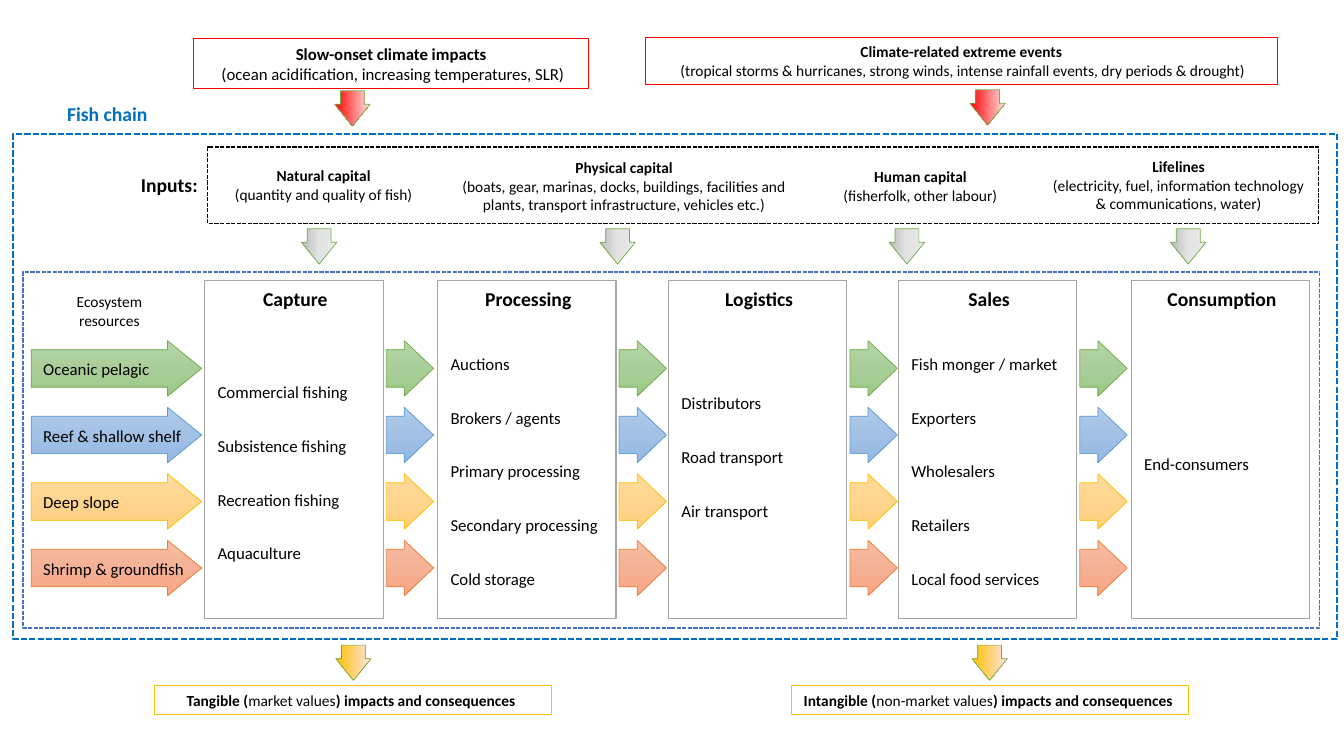
import copy
from dataclasses import dataclass
from typing import NamedTuple, Optional, Sequence

import pptx
import pptx.dml.color
import pptx.enum.dml
import pptx.enum.shapes
import pptx.enum.text
import pptx.oxml.ns
import pptx.util

Inches = pptx.util.Inches
Align = pptx.enum.text.PP_ALIGN
Preset = pptx.enum.shapes.MSO_SHAPE


@dataclass(frozen=True)
class Theme:
    font: str = "Calibri"
    heading: float = 14
    body: float = 12
    small: float = 11
    black: str = "000000"
    white: str = "FFFFFF"
    chain: str = "0070C0"
    stages: str = "4472C4"
    stage: str = "A5A5A5"
    impact: str = "FF0000"
    consequence: str = "FFC000"
    arrow_edge: str = "70AD47"
    impact_blend: tuple = ("FF0000", "FFE3E3")
    input_blend: tuple = ("EBEAEA", "E4E3E3", "BDBCBC")
    consequence_blend: tuple = ("FFC000", "FFE3E3")


class Area(NamedTuple):
    left: float
    top: float
    width: float
    height: float


class Span(NamedTuple):
    text: str
    bold: bool = False


class Resource(NamedTuple):
    name: str
    blend: tuple
    edge: str


class Stage(NamedTuple):
    name: str
    left: float
    items_top: float
    items: tuple


class Input(NamedTuple):
    name: str
    detail: str
    area: Area
    arrow_left: float


class Callout(NamedTuple):
    lines: tuple
    area: Area
    size: float
    edge: str
    edge_width: float
    fill: Optional[str]
    arrow_left: float
    arrow_top: float
    blend: tuple


THEME = Theme()
ARROW_ADJUSTMENTS = (0.674, 0.616)
SMALL_ARROW = 0.35
ROW_TOP, ROW_PITCH, ROW_HEIGHT = 3.38, 0.66, 0.55
STAGE_TOP, STAGE_WIDTH, STAGE_HEIGHT = 2.78, 1.77, 3.36

RESOURCES = (
    Resource("Oceanic pelagic", ("B5D5A7", "AACE9A", "9CC987"), "70AD47"),
    Resource("Reef & shallow shelf", ("B1CBE9", "A3C1E5", "93B9E4"), "5B9BD5"),
    Resource("Deep slope", ("FFDB9E", "FFD590", "FFD07C"), "FFC000"),
    Resource("Shrimp & groundfish", ("F7BDA5", "F5B196", "F8A582"), "ED7D31"),
)
STAGES = (
    Stage("Capture", 2.03, 3.74, ("Commercial fishing", "Subsistence fishing",
                                  "Recreation fishing", "Aquaculture")),
    Stage("Processing", 4.34, 3.46, ("Auctions", "Brokers / agents", "Primary processing",
                                     "Secondary processing", "Cold storage")),
    Stage("Logistics", 6.63, 3.85, ("Distributors", "Road transport", "Air transport")),
    Stage("Sales", 8.91, 3.46, ("Fish monger / market", "Exporters", "Wholesalers",
                                "Retailers", "Local food services")),
    Stage("Consumption", 11.22, 4.45, ("End-consumers",)),
)
INPUTS = (
    Input("Natural capital", "(quantity and quality of fish)", Area(2.22, 1.6, 1.98, 0.47), 2.99),
    Input("Physical capital", "(boats, gear, marinas, docks, buildings, facilities and plants, "
          "transport infrastructure, vehicles etc.)", Area(4.45, 1.52, 3.48, 0.66), 5.95),
    Input("Human capital", "(fisherfolk, other labour)", Area(8.16, 1.61, 1.94, 0.47), 8.82),
    Input("Lifelines", "(electricity, fuel, information technology & communications, water)",
          Area(10.33, 1.51, 2.72, 0.66), 11.61),
)
CALLOUTS = (
    Callout(((Span("Slow-onset climate impacts", True),),
             (Span(" (ocean acidification, increasing temperatures, SLR)"),)),
            Area(1.92, 0.38, 3.92, 0.5), THEME.body, THEME.impact, 0.75, None,
            3.32, 0.9, THEME.impact_blend),
    Callout(((Span("Climate-related extreme events", True),),
             (Span(" (tropical storms & hurricanes, strong winds, intense rainfall events, "
                   "dry periods & drought)"),)),
            Area(6.4, 0.37, 6.27, 0.47), THEME.small, THEME.impact, 0.75, None,
            9.62, 0.89, THEME.impact_blend),
    Callout(((Span("Tangible (", True), Span("market values"),
              Span(") impacts and consequences ", True)),),
            Area(1.53, 6.8, 3.94, 0.29), THEME.small, THEME.consequence, 1, THEME.white,
            3.33, 6.4, THEME.consequence_blend),
    Callout(((Span("Intangible (", True), Span("non-market values"),
              Span(") impacts and consequences ", True)),),
            Area(7.85, 6.8, 3.94, 0.29), THEME.small, THEME.consequence, 1, THEME.white,
            9.64, 6.4, THEME.consequence_blend),
)


def rgb(value: str) -> pptx.dml.color.RGBColor:
    return pptx.dml.color.RGBColor.from_string(value)


def write_text(box, lines: Sequence[Sequence[Span]], *, size: float, color: str = THEME.black,
               align=Align.LEFT, spacing: float = 0) -> None:
    frame = box.text_frame
    frame.word_wrap = True
    frame.auto_size = pptx.enum.text.MSO_AUTO_SIZE.SHAPE_TO_FIT_TEXT
    for index, line in enumerate(lines):
        para = frame.add_paragraph() if index else frame.paragraphs[0]
        para.alignment = align
        para.space_before = para.space_after = pptx.util.Pt(spacing)
        for span in line:
            run = para.add_run()
            run.text = span.text
            run.font.name = THEME.font
            run.font.size = pptx.util.Pt(size)
            run.font.bold = span.bold
            run.font.color.rgb = rgb(color)


def add_text(page, area: Area, lines: Sequence[Sequence[Span]], **text_format) -> None:
    write_text(page.shapes.add_textbox(*map(Inches, area)), lines, **text_format)


def add_outline(page, preset, area: Area, edge: str, width: float, dashed: bool = False):
    shape = page.shapes.add_shape(preset, *map(Inches, area))
    shape.shadow.inherit = False
    shape.fill.background()
    shape.line.color.rgb = rgb(edge)
    shape.line.width = pptx.util.Pt(width)
    if dashed:
        shape.line.dash_style = pptx.enum.dml.MSO_LINE.SQUARE_DOT
    return shape


def add_arrow(page, area: Area, blend: Sequence[str], edge: str, *,
              angle: float = 270, rotation: float = 0) -> None:
    arrow = add_outline(page, Preset.RIGHT_ARROW, area, edge, 0.5)
    arrow.rotation = rotation
    for index, value in enumerate(ARROW_ADJUSTMENTS):
        arrow.adjustments[index] = value
    arrow.fill.gradient()
    arrow.fill.gradient_angle = angle
    # A new gradient has two stops; add the rest
    stops = arrow.element.spPr.find(".//" + pptx.oxml.ns.qn("a:gsLst"))
    for _ in blend[2:]:
        stops.append(copy.deepcopy(stops[0]))
    for index, (stop, color) in enumerate(zip(arrow.fill.gradient_stops, blend)):
        stop.position = index / (len(blend) - 1)
        stop.color.rgb = rgb(color)


def add_down_arrow(page, left: float, top: float, blend: Sequence[str], angle: float) -> None:
    add_arrow(page, Area(left, top, SMALL_ARROW, SMALL_ARROW), blend, THEME.arrow_edge,
              angle=angle, rotation=90)


def main() -> None:
    deck = pptx.Presentation()
    deck.slide_width, deck.slide_height = Inches(13.33), Inches(7.5)
    page = deck.slides.add_slide(deck.slide_layouts[6])

    # Nested frames: fish chain, inputs, stages
    for area, edge, width in ((Area(0.13, 1.33, 13.13, 5.01), THEME.chain, 1.5),
                              (Area(2.06, 1.46, 11.02, 0.76), THEME.black, 1),
                              (Area(0.23, 2.7, 12.86, 3.53), THEME.stages, 1)):
        add_outline(page, Preset.RECTANGLE, area, edge, width, dashed=True)
    add_text(page, Area(0.1, 0.96, 1.93, 0.34), [[Span("Fish chain", True)]],
             size=THEME.heading, color=THEME.chain, align=Align.CENTER)
    add_text(page, Area(1.18, 1.67, 0.88, 0.34), [[Span("Inputs:", True)]],
             size=THEME.heading, align=Align.RIGHT)
    add_text(page, Area(0.44, 2.85, 1.29, 0.47), [[Span("Ecosystem resources")]],
             size=THEME.small, align=Align.CENTER)

    # Climate impacts above, consequences below
    for note in CALLOUTS:
        box = add_outline(page, Preset.RECTANGLE, note.area, note.edge, note.edge_width)
        if note.fill:
            box.fill.solid()
            box.fill.fore_color.rgb = rgb(note.fill)
        write_text(box, note.lines, size=note.size, align=Align.CENTER)
        add_down_arrow(page, note.arrow_left, note.arrow_top, note.blend, 90)

    # Inputs
    for item in INPUTS:
        add_text(page, item.area, [[Span(item.name, True)], [Span(item.detail)]],
                 size=THEME.small, align=Align.CENTER)
        add_down_arrow(page, item.arrow_left, 2.27, THEME.input_blend, 270)

    # Stages
    for stage in STAGES:
        add_outline(page, Preset.RECTANGLE,
                    Area(stage.left, STAGE_TOP, STAGE_WIDTH, STAGE_HEIGHT), THEME.stage, 0.75)
        text_left = stage.left + 0.03
        add_text(page, Area(text_left, 2.8, 1.74, 0.34), [[Span(stage.name, True)]],
                 size=THEME.heading, align=Align.CENTER)
        count = len(stage.items)
        add_text(page, Area(text_left, stage.items_top, 1.74, 0.54 * count - 0.24),
                 [[Span(name)] for name in stage.items], size=THEME.body, spacing=12)

    # Resource flows through the stages
    for row, resource in enumerate(RESOURCES):
        top = ROW_TOP + row * ROW_PITCH
        add_arrow(page, Area(0.31, top, 1.69, ROW_HEIGHT), resource.blend, resource.edge)
        add_text(page, Area(0.33, top + 0.13, 1.61, 0.3), [[Span(resource.name)]],
                 size=THEME.body, spacing=6)
        for stage in STAGES[:-1]:
            add_arrow(page, Area(stage.left + STAGE_WIDTH + 0.03, top, 0.47, ROW_HEIGHT),
                      resource.blend, resource.edge)

    deck.save("out.pptx")


if __name__ == "__main__":
    main()
